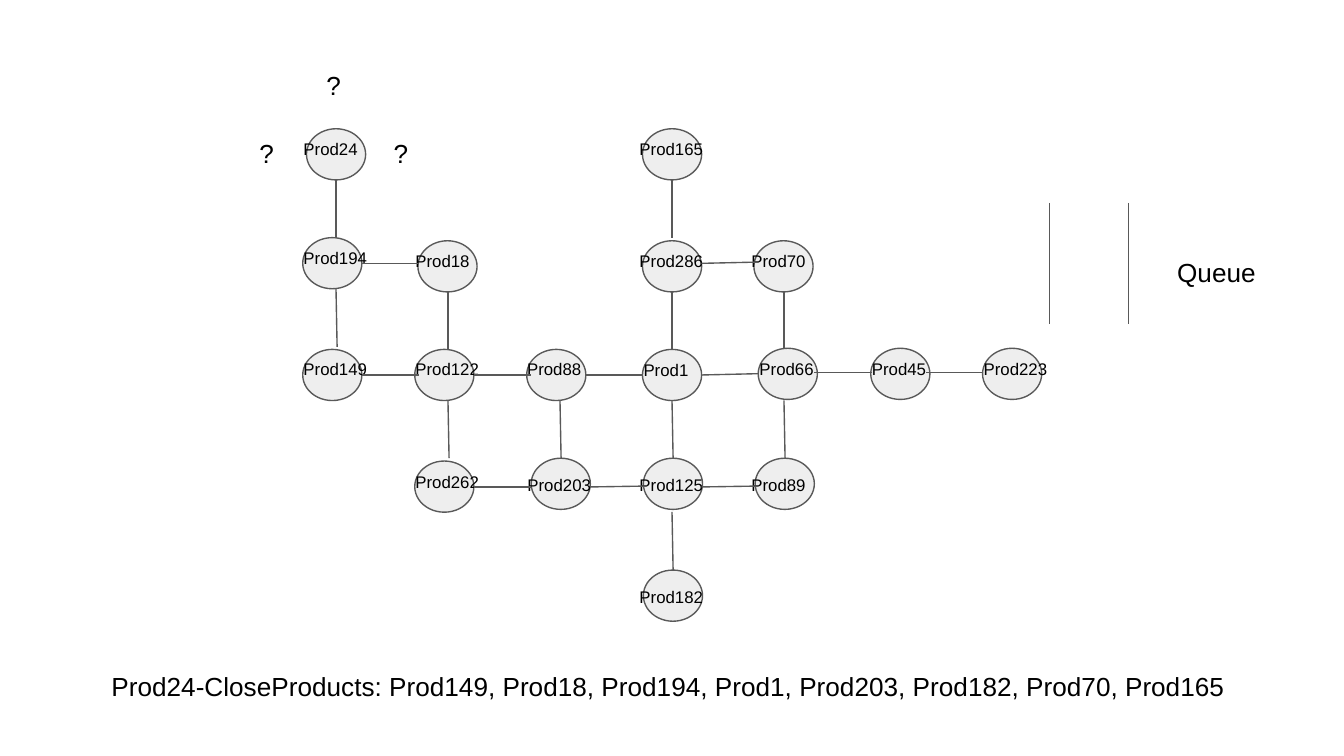
import dataclasses

import pptx
import pptx.dml.color
import pptx.enum.shapes
import pptx.enum.text
import pptx.oxml
import pptx.oxml.ns
import pptx.util

Pt = pptx.util.Pt
HEX = {"node": "EEEEEE", "line": "595959", "text": "000000"}
NODE_W, NODE_H = 31.7, 27.4
RISE, RUN = 31, 30.6


@dataclasses.dataclass
class Node:
    name: str
    left: float
    top: float
    text_left: float
    text_top: float


@dataclasses.dataclass
class Edge:
    x: float
    y: float
    shift: float = 0


@dataclasses.dataclass
class Label:
    text: str
    left: float
    top: float
    width: float
    height: float


def col(index: int) -> float:
    return 155.5 + 60 * index


NODES = [
    Node("Prod24", 164.2, 69, col(0), 69),
    Node("Prod165", 344.2, 69, col(3), 69),
    Node("Prod194", 162.2, 127.3, col(0), 127),
    Node("Prod18", 223.9, 129, col(1), 129),
    Node("Prod286", 344.2, 129, col(3), 129),
    Node("Prod70", 403.9, 129, col(4), 129),
    Node("Prod149", 162.2, 187.2, col(0), 186.8),
    Node("Prod122", 222.2, 187.2, col(1), 186.8),
    Node("Prod88", 282.2, 187.2, 275.3, 186.8),
    Node("Prod1", 344.2, 187.2, 337.7, 187.2),
    Node("Prod66", 406.2, 186.6, 399.8, 186.8),
    Node("Prod45", 466.5, 186.6, 460, 186.8),
    Node("Prod223", 526.4, 186.6, 519.9, 186.8),
    Node("Prod262", 222.2, 247, col(1), 247),
    Node("Prod203", 284.6, 245.5, col(2), 249),
    Node("Prod125", 344.7, 245.5, col(3), 249),
    Node("Prod89", 404.6, 245.5, col(4), 249),
    Node("Prod182", 344.7, 305.4, col(3), 309),
]

RISES = [
    Edge(180, 127.4), Edge(180, 185.8, 0.6),
    Edge(240, 187.2), Edge(240, 245.5, 0.6),
    Edge(300, 245.5, 0.6),
    Edge(360, 127.4), Edge(360, 187.2),
    Edge(360, 245.5, 0.6), Edge(360, 305.3, 0.6),
    Edge(420, 187.2), Edge(420, 245.5, 0.6),
]

RUNS = [
    Edge(193.7, 141.1), Edge(375.8, 141.1, 0.7),
    Edge(193.7, 200.9), Edge(253.7, 200.9), Edge(313.9, 200.9),
    Edge(375.8, 200.9, 0.7), Edge(436.3, 199.5), Edge(496.1, 199.5),
    Edge(253.7, 260.9), Edge(316.1, 260.9, 0.5), Edge(375.8, 260.9, 0.5),
]

LABELS = [
    Label("Queue", 623.5, 130.3, 63.4, 27.4),
    Label("Prod24-CloseProducts: Prod149, Prod18, Prod194, Prod1, "
          "Prod203, Prod182, Prod70, Prod165", 52.6, 352.1, 621.4, 41.8),
    Label("?", 167.8, 30.2, 23, 23),
    Label("?", 203.8, 66.2, 23, 23),
    Label("?", 131.8, 66.2, 23, 23),
]


def tint(name: str) -> pptx.dml.color.RGBColor:
    return pptx.dml.color.RGBColor.from_string(HEX[name])


def draw_line(slide, x1: float, y1: float, x2: float, y2: float) -> None:
    line = slide.shapes.add_connector(
        pptx.enum.shapes.MSO_CONNECTOR.STRAIGHT, Pt(x1), Pt(y1), Pt(x2), Pt(y2))
    line.line.color.rgb = tint("line")
    line.line.width = Pt(0.75)
    props = line._element.spPr
    props.append(pptx.oxml.parse_xml(
        f"<a:effectLst {pptx.oxml.ns.nsdecls('a')}/>"))


def draw_label(slide, label: Label, size: float) -> None:
    box = slide.shapes.add_textbox(
        Pt(label.left), Pt(label.top), Pt(label.width), Pt(label.height))
    frame = box.text_frame
    frame.word_wrap = True
    frame.vertical_anchor = pptx.enum.text.MSO_ANCHOR.TOP
    frame.margin_left = frame.margin_right = Pt(7.2)
    frame.margin_top = frame.margin_bottom = Pt(7.2)
    frame.text = label.text
    font = frame.paragraphs[0].runs[0].font
    font.name = "Arial"
    font.size = Pt(size)
    font.color.rgb = tint("text")


def draw_node(slide, node: Node) -> None:
    oval = slide.shapes.add_shape(
        pptx.enum.shapes.MSO_SHAPE.OVAL,
        Pt(node.left), Pt(node.top), Pt(NODE_W), Pt(NODE_H))
    oval.shadow.inherit = False
    oval.fill.solid()
    oval.fill.fore_color.rgb = tint("node")
    oval.line.color.rgb = tint("line")
    oval.line.width = Pt(0.75)
    draw_label(slide, Label(node.name, node.text_left, node.text_top, 50, NODE_H), 9)


def main() -> None:
    deck = pptx.Presentation()
    deck.slide_width, deck.slide_height = Pt(720), Pt(405)
    slide = deck.slides.add_slide(deck.slide_layouts[6])
    for node in NODES:
        draw_node(slide, node)
    for edge in RISES:
        draw_line(slide, edge.x + edge.shift, edge.y, edge.x, edge.y - RISE)
    for edge in RUNS:
        draw_line(slide, edge.x, edge.y, edge.x + RUN, edge.y - edge.shift)
    for x in (562.4, 604.6):
        draw_line(slide, x, 108.7, x, 173.5)
    for label in LABELS:
        draw_label(slide, label, 14)
    deck.save("out.pptx")


if __name__ == "__main__":
    main()
